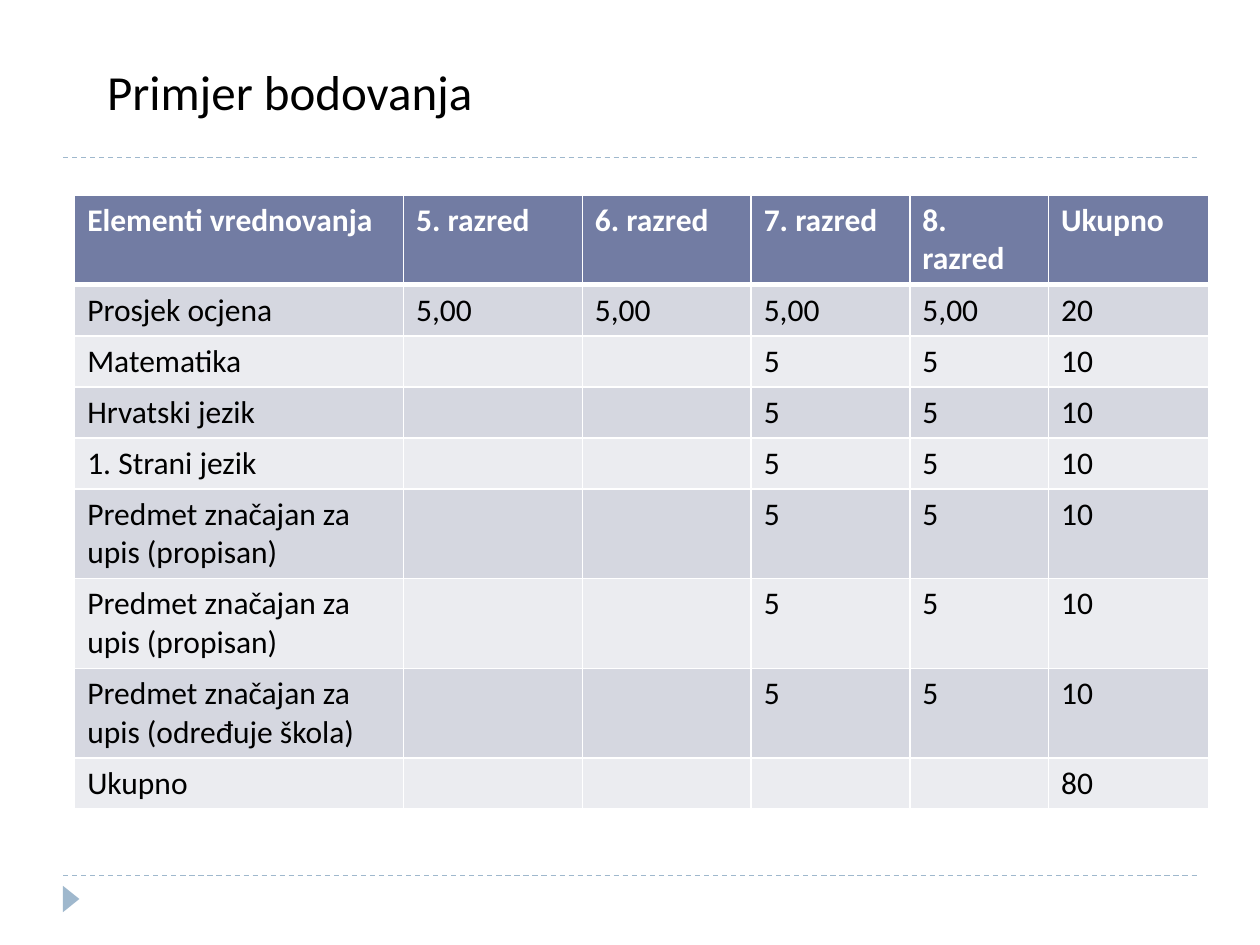
from lxml.etree import SubElement
from pptx import Presentation
from pptx.dml.color import RGBColor
from pptx.enum.dml import MSO_LINE_DASH_STYLE as DASH
from pptx.enum.shapes import MSO_CONNECTOR, MSO_SHAPE
from pptx.enum.text import MSO_ANCHOR, MSO_AUTO_SIZE, PP_ALIGN
from pptx.oxml import parse_xml
from pptx.oxml.ns import nsdecls, qn
from pptx.util import Pt

TITLE = "Primjer bodovanja"
HEADER = ["Elementi vrednovanja", "5. razred", "6. razred", "7. razred", "8. razred", "Ukupno"]
SUBJECTS = [
    "Matematika",
    "Hrvatski jezik",
    "1. Strani jezik",
    "Predmet značajan za upis (propisan)",
    "Predmet značajan za upis (propisan)",
    "Predmet značajan za upis (određuje škola)",
]
ROWS = [
    HEADER,
    ["Prosjek ocjena"] + ["5,00"] * 4 + ["20"],
    *[[subject, "", "", "5", "5", "10"] for subject in SUBJECTS],
    ["Ukupno", "", "", "", "", "80"],
]
COL_WIDTHS = [187.9, 102.2, 96.5, 90.7, 79.2, 91.5]
ONE_LINE, TWO_LINES = 29.2, 51.2
TWO_LINE_ROWS = {0, 5, 6, 7}

FONT = "Calibri"
BLACK, WHITE, ACCENT = "000000", "FFFFFF", "9FB8CD"
HEAD_FILL, BAND_FILLS = "727CA3", ("D5D7E0", "EBECF0")


def rgb(value):
    return RGBColor.from_string(value)


def add_run(p, text, size, color, bold=False):
    r = p.add_run()
    r.text = text
    r.font.name, r.font.size, r.font.bold = FONT, Pt(size), bold
    r.font.color.rgb = rgb(color)


def add_rule(s, y):
    """Dashed line across the slide."""
    line = s.shapes.add_connector(MSO_CONNECTOR.STRAIGHT, Pt(36), Pt(y), Pt(684), Pt(y))
    line.line.color.rgb = rgb(ACCENT)
    line.line.width = Pt(0.75)
    line.line.dash_style = DASH.DASH
    SubElement(line._element.spPr, qn("a:effectLst"))


def set_borders(cell, widths):
    """White borders; widths in points for left, right, top, bottom."""
    tcPr = cell._tc.get_or_add_tcPr()
    for i, (side, width) in enumerate(zip("LRTB", widths)):
        tcPr.insert(i, parse_xml(
            f'<a:ln{side} {nsdecls("a")} w="{Pt(width)}"><a:solidFill>'
            f'<a:srgbClr val="{WHITE}"/></a:solidFill></a:ln{side}>'))


def add_score_table(s):
    heights = [TWO_LINES if i in TWO_LINE_ROWS else ONE_LINE for i in range(len(ROWS))]
    table = s.shapes.add_table(len(ROWS), len(HEADER), Pt(42.7), Pt(111.5),
                               Pt(sum(COL_WIDTHS)), Pt(sum(heights))).table
    for column, width in zip(table.columns, COL_WIDTHS):
        column.width = Pt(width)
    for i, (values, height) in enumerate(zip(ROWS, heights)):
        table.rows[i].height = Pt(height)
        head = i == 0
        for j, text in enumerate(values):
            cell = table.cell(i, j)
            cell.fill.solid()
            cell.fill.fore_color.rgb = rgb(HEAD_FILL if head else BAND_FILLS[(i - 1) % 2])
            set_borders(cell, (1, 1, 3 if i == 1 else 1, 3 if head else 1))
            if text:
                add_run(cell.text_frame.paragraphs[0], text, 18, WHITE if head else BLACK, head)


def main():
    prs = Presentation()
    prs.slide_width, prs.slide_height = Pt(720), Pt(540)
    s = prs.slides.add_slide(prs.slide_layouts[5])

    for y in (500.4, 90):
        add_rule(s, y)

    marker = s.shapes.add_shape(MSO_SHAPE.ISOSCELES_TRIANGLE, Pt(33.1), Pt(509), Pt(15.1), Pt(9.4))
    marker.rotation = 90
    marker.shadow.inherit = False
    marker.fill.solid()
    marker.fill.fore_color.rgb = rgb(ACCENT)
    marker.line.fill.background()

    add_score_table(s)

    title = s.shapes.title
    title.left, title.top, title.width, title.height = Pt(54), Pt(31.7), Pt(289.4), Pt(41)
    tf = title.text_frame
    tf.word_wrap = True
    tf.auto_size = MSO_AUTO_SIZE.SHAPE_TO_FIT_TEXT
    tf.vertical_anchor = MSO_ANCHOR.TOP
    p = tf.paragraphs[0]
    p.alignment = PP_ALIGN.LEFT
    add_run(p, TITLE, 28, BLACK)

    prs.save("out.pptx")


if __name__ == "__main__":
    main()
